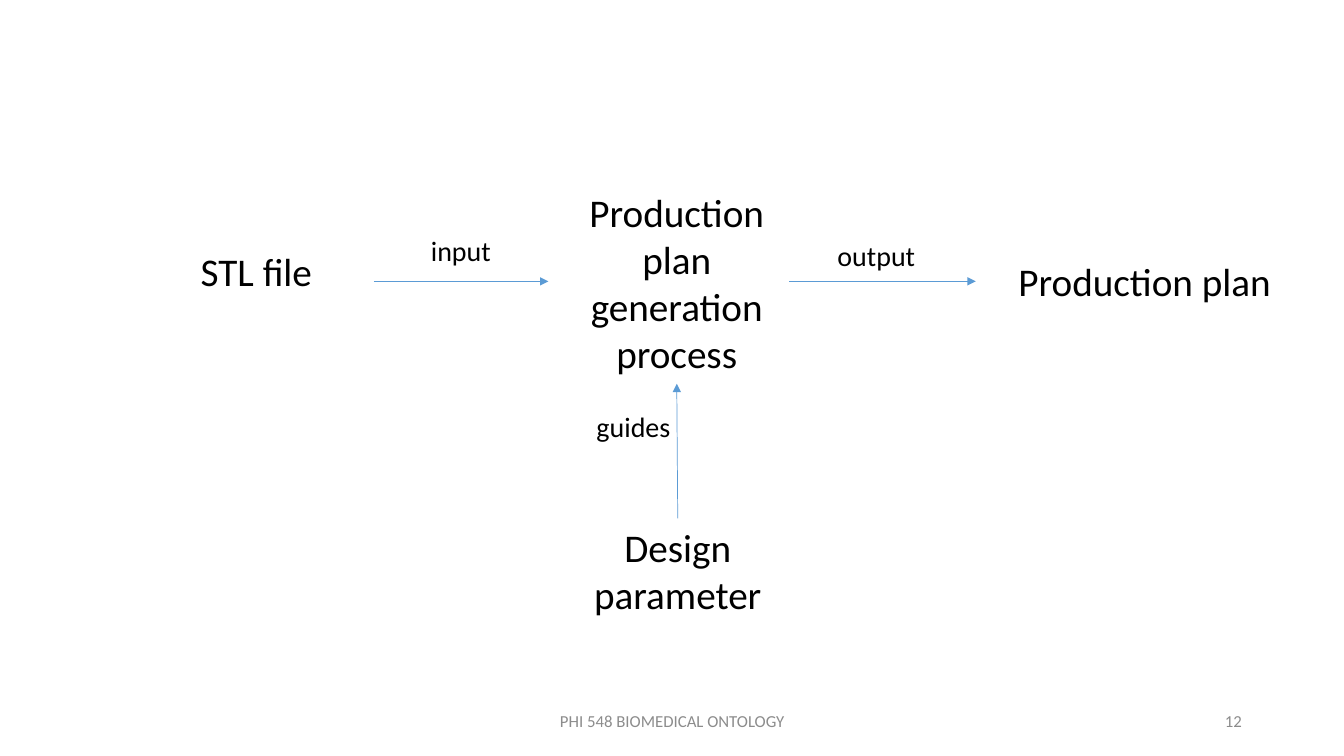
from lxml.etree import SubElement
from pptx import Presentation
from pptx.dml.color import RGBColor
from pptx.enum.shapes import MSO_CONNECTOR
from pptx.enum.text import MSO_ANCHOR, PP_ALIGN
from pptx.oxml.ns import qn
from pptx.util import Cm, Pt

BLACK = RGBColor(0x00, 0x00, 0x00)
GRAY = RGBColor(0x8C, 0x8C, 0x8C)
BLUE = RGBColor(0x5B, 0x9B, 0xD5)


class FlowSlide:
    """Draws the nodes, arrows and footer of a process diagram on one slide."""

    font_name = "Calibri"
    node_size = 28
    label_size = 20
    footer_size = 12

    def __init__(self, page):
        self.page = page

    def text(self, words, left, top, width, height, size, color=BLACK,
             align=PP_ALIGN.CENTER, anchor=MSO_ANCHOR.TOP):
        box = self.page.shapes.add_textbox(Cm(left), Cm(top), Cm(width), Cm(height))
        frame = box.text_frame
        frame.word_wrap = True
        frame.vertical_anchor = anchor
        frame.text = words
        para = frame.paragraphs[0]
        para.alignment = align
        for span in para.runs:
            span.font.name = self.font_name
            span.font.size = Pt(size)
            span.font.color.rgb = color
        return box

    def node(self, words, left, top, width, height):
        return self.text(words, left, top, width, height, self.node_size)

    def label(self, words, left, top):
        return self.text(words, left, top, 3.07, 1.11, self.label_size)

    def footer(self, words, left, width, align):
        return self.text(words, left, 17.65, width, 1.01, self.footer_size,
                         GRAY, align, MSO_ANCHOR.MIDDLE)

    def arrow(self, start_x, start_y, end_x, end_y):
        arrow = self.page.shapes.add_connector(
            MSO_CONNECTOR.STRAIGHT, Cm(start_x), Cm(start_y), Cm(end_x), Cm(end_y))
        arrow.line.color.rgb = BLUE
        arrow.line.width = Pt(0.5)
        SubElement(arrow.line._get_or_add_ln(), qn("a:tailEnd"), type="triangle")
        SubElement(arrow._element.spPr, qn("a:effectLst"))
        return arrow


def main():
    deck = Presentation()
    deck.slide_width = Cm(33.87)
    deck.slide_height = Cm(19.05)
    flow = FlowSlide(deck.slides.add_slide(deck.slide_layouts[6]))

    process = flow.node("Production plan generation process", 14.02, 4.62, 6.07, 5.05)
    flow.node("STL file", 3.4, 6.1, 6.12, 1.45)
    flow.node("Production plan", 25.02, 6.35, 7.65, 1.45)
    parameter = flow.node("Design parameter", 14.02, 13.06, 6.12, 2.64)

    flow.arrow(9.42, 7.09, 13.82, 7.09)
    flow.arrow(19.89, 7.09, 24.59, 7.09)
    guide = flow.arrow(17.08, 13.06, 17.06, 9.67)
    guide.begin_connect(parameter, 0)
    guide.end_connect(process, 2)

    flow.label("input", 10.08, 5.77)
    flow.label("guides", 14.43, 10.19)
    flow.label("output", 20.55, 5.89)

    flow.footer("PHI 548 BIOMEDICAL ONTOLOGY", 11.23, 11.43, PP_ALIGN.CENTER)
    flow.footer("12", 23.93, 7.62, PP_ALIGN.RIGHT)
    deck.save("out.pptx")


if __name__ == "__main__":
    main()
